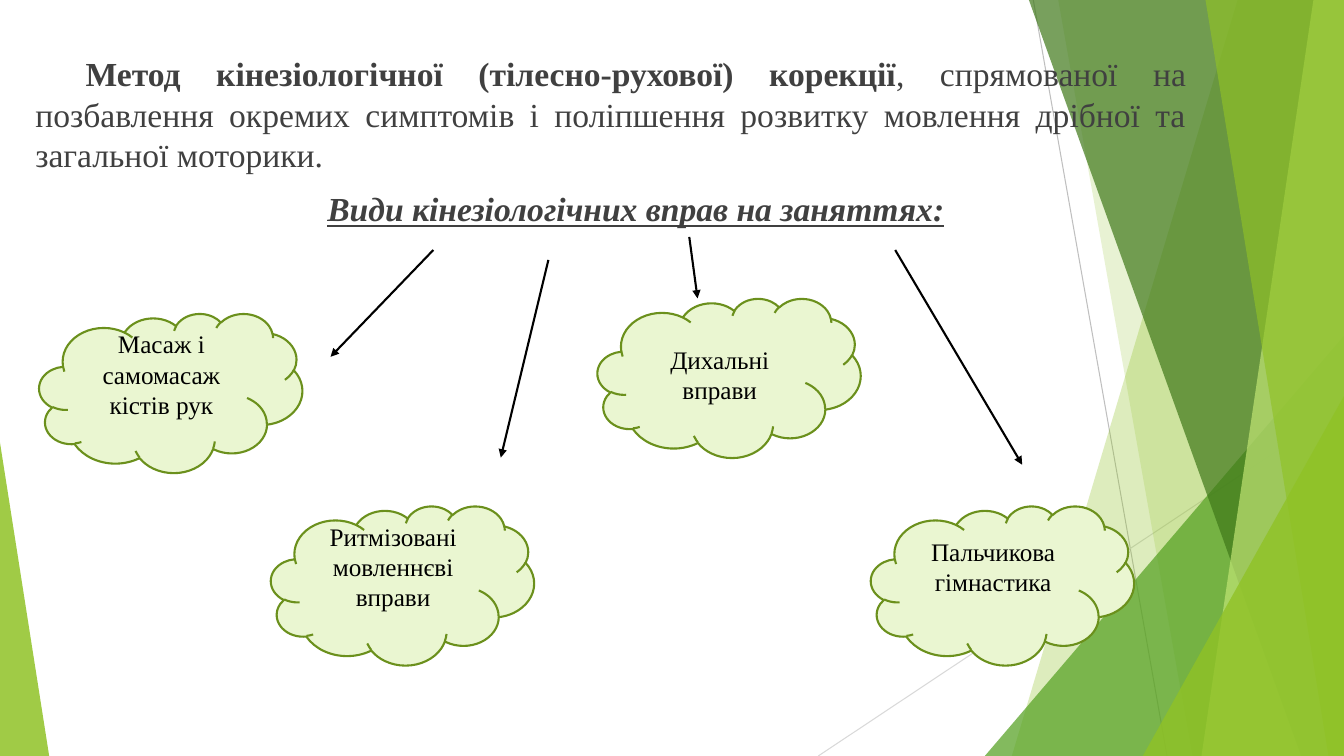
from lxml import etree
from pptx import Presentation
from pptx.dml.color import RGBColor
from pptx.enum.shapes import MSO_CONNECTOR, MSO_SHAPE
from pptx.enum.text import MSO_ANCHOR, PP_ALIGN
from pptx.oxml.ns import qn
from pptx.util import Cm, Pt

FONT = "Times New Roman"
WIDTH, HEIGHT = 33.87, 19.05


def color(value):
    return RGBColor.from_string(value)


def fill(sp, value, opacity=100):
    """Fill a shape with one colour; opacity is in percent."""
    sp.shadow.inherit = False
    sp.fill.solid()
    sp.fill.fore_color.rgb = color(value)
    if opacity < 100:
        srgb = sp.fill._xPr.find(qn("a:solidFill"))[0]
        etree.SubElement(srgb, qn("a:alpha")).set("val", str(opacity * 1000))


def add_ribbon(s, top_x, bottom_x, value, opacity):
    """Band from a slanted left side to the slide's right edge."""
    builder = s.shapes.build_freeform(Cm(top_x), 0)
    builder.add_line_segments(
        [(Cm(WIDTH), 0), (Cm(WIDTH), Cm(HEIGHT)), (Cm(bottom_x), Cm(HEIGHT))])
    sp = builder.convert_to_shape()
    fill(sp, value, opacity)
    sp.line.fill.background()


def add_triangle(s, left, top, width, apex, value, opacity):
    """Triangle standing on the slide's bottom edge."""
    sp = s.shapes.add_shape(MSO_SHAPE.ISOSCELES_TRIANGLE, Cm(left), Cm(top),
                            Cm(width), Cm(HEIGHT - top))
    sp.adjustments[0] = apex
    fill(sp, value, opacity)
    sp.line.fill.background()


def add_line(s, start, end, value, width, arrow=False):
    line = s.shapes.add_connector(MSO_CONNECTOR.STRAIGHT,
                                  *(Cm(v) for v in start + end))
    line.line.color.rgb = color(value)
    line.line.width = Pt(width)
    if arrow:
        etree.SubElement(line.line._get_or_add_ln(),
                         qn("a:tailEnd")).set("type", "triangle")
    etree.SubElement(line._element.spPr, qn("a:effectLst"))


def format_run(r, size, value):
    r.font.name = FONT
    r.font.size = Pt(size)
    r.font.color.rgb = color(value)


def add_cloud(s, left, top, text, bottom_inset):
    sp = s.shapes.add_shape(MSO_SHAPE.CLOUD, Cm(left), Cm(top),
                            Cm(6.63), Cm(4.01))
    fill(sp, "EAF6D1")
    sp.line.color.rgb = color("6B901C")
    sp.line.width = Pt(1.5)
    tf = sp.text_frame
    tf.text = text
    tf.word_wrap = True
    tf.vertical_anchor = MSO_ANCHOR.MIDDLE
    tf.margin_bottom = Cm(bottom_inset)
    p = tf.paragraphs[0]
    p.alignment = PP_ALIGN.CENTER
    format_run(p.runs[0], 18, "000000")


def add_paragraph(p, alignment, texts):
    p.alignment = alignment
    p.space_before = Pt(10)
    p._p.get_or_add_pPr().set("indent", str(Cm(1.27)))
    for text in texts:
        r = p.add_run()
        r.text = text
        format_run(r, 24, "404040")
    p.runs[0].font.bold = True


def add_intro(s):
    tf = s.shapes.add_textbox(Cm(0.64), Cm(1.22), Cm(29.5), Cm(16.56)).text_frame
    tf.word_wrap = True
    add_paragraph(tf.paragraphs[0], PP_ALIGN.JUSTIFY, [
        "Метод кінезіологічної (тілесно-рухової) корекції",
        ", спрямованої на позбавлення окремих симптомів і поліпшення "
        "розвитку мовлення дрібної та загальної моторики."])
    heading = tf.add_paragraph()
    add_paragraph(heading, PP_ALIGN.CENTER,
                  ["Види кінезіологічних вправ на заняттях:"])
    heading.runs[0].font.italic = True
    heading.runs[0].font.underline = True


def add_background(s):
    add_line(s, (26.04, 0), (29.41, HEIGHT), "BFBFBF", 0.75)
    add_line(s, (WIDTH, 10.24), (20.62, HEIGHT), "D9D9D9", 0.75)
    add_ribbon(s, 31.19, 25.5, "90C226", 30)
    add_ribbon(s, 26.67, 30.05, "90C226", 20)
    add_triangle(s, 24.82, 8.46, 9.05, 1, "54A021", 72)
    add_ribbon(s, 25.93, 32.79, "3F7819", 70)
    add_ribbon(s, 33.1, 30.28, "C0E474", 70)
    add_ribbon(s, 30.38, 33.48, "90C226", 65)
    add_triangle(s, 28.8, 9.98, 5.07, 1, "90C226", 80)
    add_triangle(s, 0, 11.15, 1.24, 0, "90C226", 85)


def main():
    prs = Presentation()
    prs.slide_width, prs.slide_height = Cm(WIDTH), Cm(HEIGHT)
    s = prs.slides.add_slide(prs.slide_layouts[6])
    add_background(s)
    add_intro(s)
    for left, top, text, bottom_inset in [
            (21.95, 12.75, "Пальчикова гімнастика", 0.89),
            (15.06, 7.52, "Дихальні вправи", 0.13),
            (6.83, 12.75, "Ритмізовані мовленнєві вправи", 0.89),
            (0.99, 7.9, "Масаж і самомасаж кістів рук", 0.89)]:
        add_cloud(s, left, top, text, bottom_inset)
    for start, end in [((10.92, 6.3), (8.33, 8.99)),
                       ((13.82, 6.55), (12.62, 11.53)),
                       ((22.56, 6.3), (25.76, 11.71)),
                       ((17.37, 5.97), (17.58, 7.52))]:
        add_line(s, start, end, "000000", 1.5, arrow=True)
    prs.save("out.pptx")


if __name__ == "__main__":
    main()
